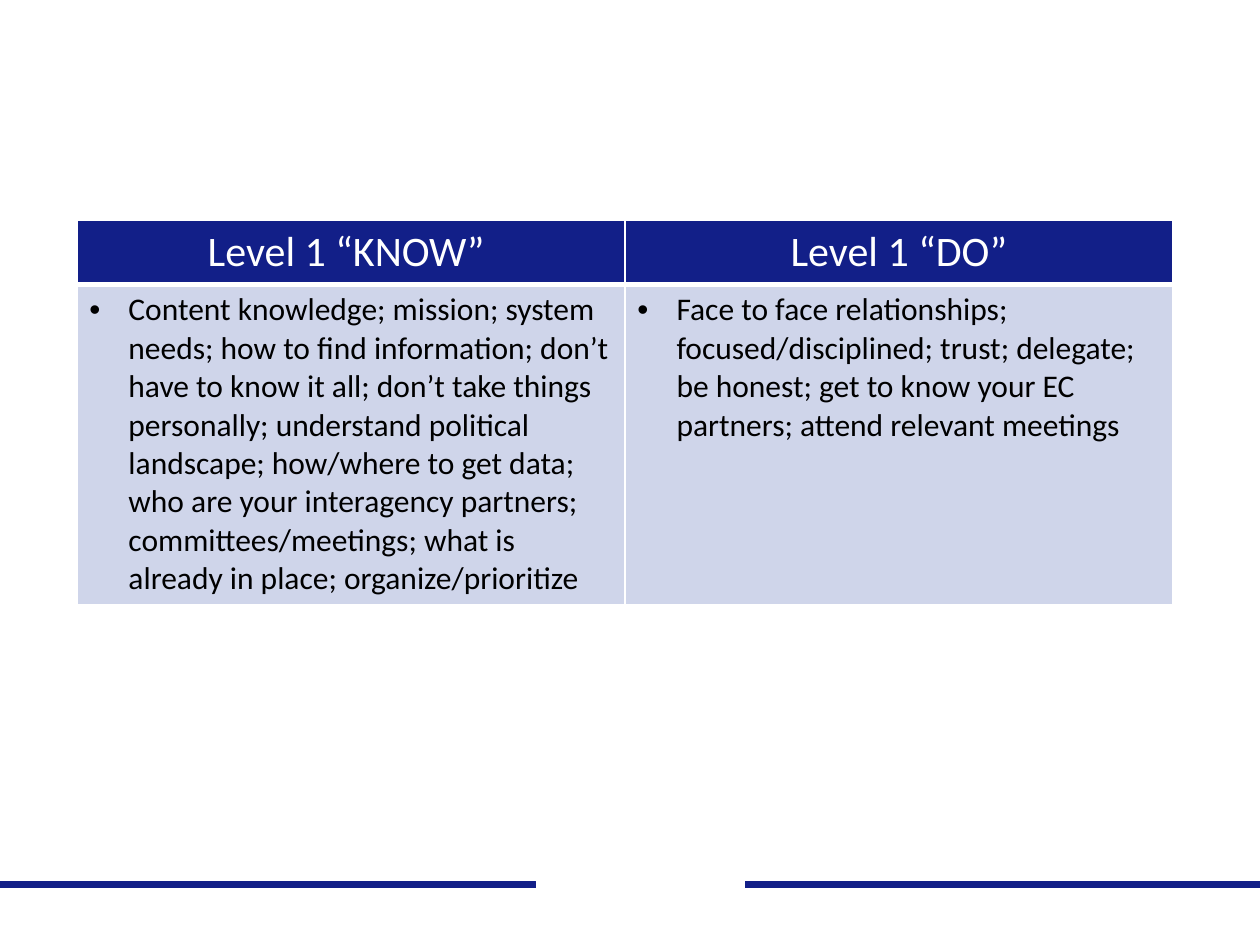
from lxml.etree import SubElement
from pptx import Presentation
from pptx.dml.color import RGBColor
from pptx.enum.text import PP_ALIGN
from pptx.oxml.ns import qn
from pptx.util import Inches, Pt

NAVY = RGBColor(0x12, 0x1F, 0x88)
PALE = RGBColor(0xCF, 0xD5, 0xEA)
WHITE = RGBColor(0xFF, 0xFF, 0xFF)
BLACK = RGBColor(0, 0, 0)

HEADS = ["Level 1 “KNOW” ", "Level 1 “DO”"]
NOTES = [
    "Content knowledge; mission; system needs; how to find information; "
    "don’t have to know it all; don’t take things personally; understand "
    "political landscape; how/where to get data; who are your interagency "
    "partners; committees/meetings; what is already in place; "
    "organize/prioritize",
    "Face to face relationships; focused/disciplined; trust; delegate; "
    "be honest; get to know your EC partners; attend relevant meetings",
]


def write(frame, text, size, color, align=PP_ALIGN.LEFT, bullet=False):
    para = frame.paragraphs[0]
    para.alignment = align
    if bullet:
        props = para._p.get_or_add_pPr()
        props.set("marL", str(Inches(0.31)))
        props.set("indent", str(-Inches(0.31)))
        SubElement(props, qn("a:buFont"), typeface="Arial")
        SubElement(props, qn("a:buChar"), char="•")
    run = para.add_run()
    run.text = text
    run.font.name = "Calibri"
    run.font.size = Pt(size)
    run.font.color.rgb = color


def edge(cell, base):
    props = cell._tc.get_or_add_tcPr()
    for side, width in zip("LRTB", (1, 1, 1, base)):
        line = SubElement(props, qn(f"a:ln{side}"), w=str(Pt(width)))
        fill = SubElement(line, qn("a:solidFill"))
        SubElement(fill, qn("a:srgbClr"), val=str(WHITE))


def add_grid(slide, left, top, width, height):
    table = slide.shapes.add_table(2, 2, left, top, width, height).table
    table.horz_banding = False
    table.rows[0].height = Inches(0.5)
    table.rows[1].height = height - Inches(0.5)
    rows = [
        (HEADS, NAVY, 3, dict(size=24, color=WHITE, align=PP_ALIGN.CENTER)),
        (NOTES, PALE, 1, dict(size=18, color=BLACK, bullet=True)),
    ]
    for row, (texts, fill, base, style) in enumerate(rows):
        for col, text in enumerate(texts):
            cell = table.cell(row, col)
            edge(cell, base)
            cell.fill.solid()
            cell.fill.fore_color.rgb = fill
            write(cell.text_frame, text, **style)


def add_rule(slide, left, top, width, color):
    rule = slide.shapes.add_connector(1, left, top, left + width, top)
    rule.line.color.rgb = color
    rule.line.width = Pt(4.5)
    SubElement(rule._element.spPr, qn("a:effectLst"))


def main():
    deck = Presentation()
    deck.slide_width, deck.slide_height = Inches(10), Inches(7.5)
    slide = deck.slides.add_slide(deck.slide_layouts[6])
    add_rule(slide, 0, Inches(7.02), Inches(10), NAVY)
    add_rule(slide, Inches(4.25), Inches(7.02), Inches(1.66), WHITE)
    add_grid(slide, Inches(0.61), Inches(1.75), Inches(8.7), Inches(3))
    deck.save("out.pptx")


if __name__ == "__main__":
    main()
